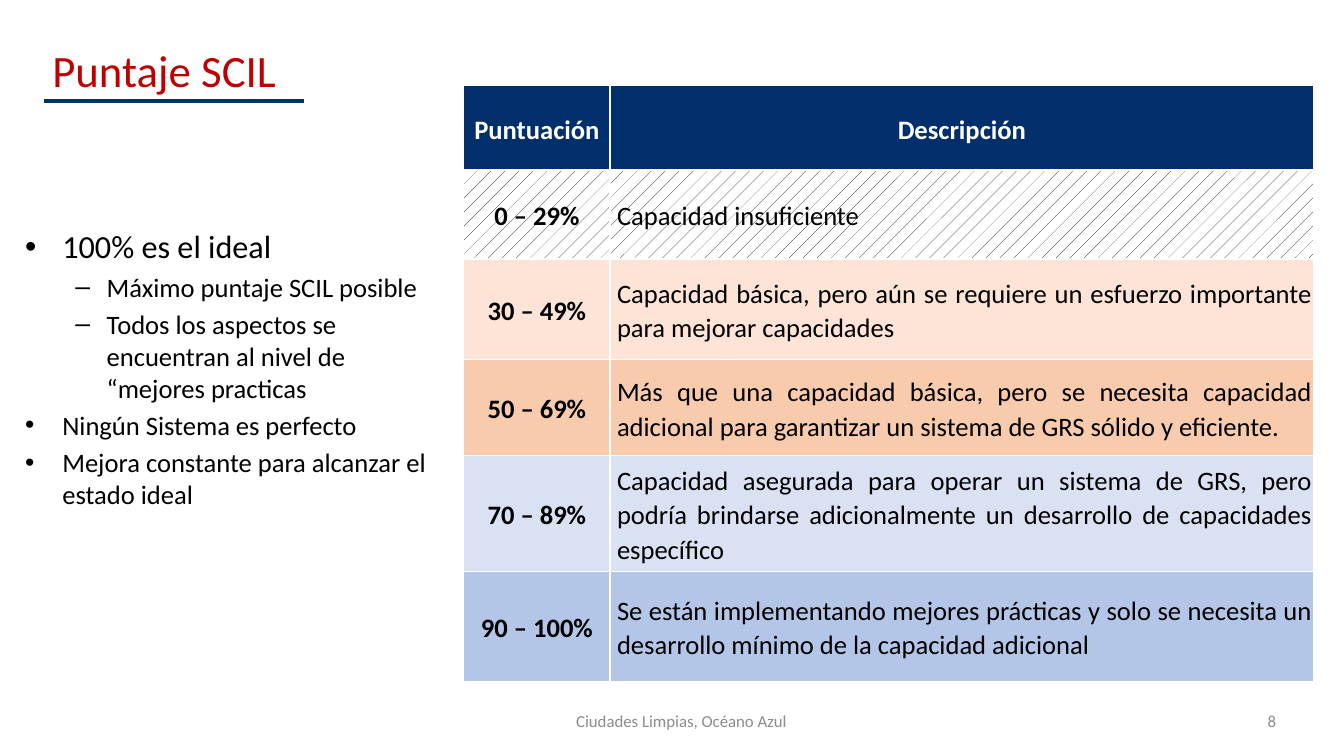
from dataclasses import dataclass

from lxml.etree import SubElement
from pptx import Presentation
from pptx.dml.color import RGBColor
from pptx.enum.dml import MSO_PATTERN
from pptx.enum.shapes import MSO_CONNECTOR
from pptx.enum.text import MSO_ANCHOR, PP_ALIGN
from pptx.oxml.ns import qn
from pptx.util import Inches, Pt


@dataclass(frozen=True)
class Theme:
    """Colours, font and type sizes of the slide."""

    font: str = "Calibri"
    red: str = "C00000"
    rule: str = "003366"
    navy: str = "002F6C"
    black: str = "000000"
    white: str = "FFFFFF"
    grey: str = "8C8C8C"
    title_size: float = 32
    lead_size: float = 23
    body_size: float = 19
    footer_size: float = 12


THEME = Theme()

POINTS = [
    (0, "100% es el ideal", THEME.lead_size),
    (1, "Máximo puntaje SCIL posible", THEME.body_size),
    (1, "Todos los aspectos se encuentran al nivel de “mejores practicas", THEME.body_size),
    (0, "Ningún Sistema es perfecto", THEME.body_size),
    (0, "Mejora constante para alcanzar el estado ideal", THEME.body_size),
]
BULLETS = [("•", 0.37, -0.37), ("–", 0.81, -0.31)]

SCORES = [
    ("Puntuación", "Descripción", THEME.navy, 0.84),
    ("0 – 29%", "Capacidad insuficiente", None, 0.88),
    ("30 – 49%", "Capacidad básica, pero aún se requiere un esfuerzo importante "
     "para mejorar capacidades", "FDE4D6", 1),
    ("50 – 69%", "Más que una capacidad básica, pero se necesita capacidad adicional "
     "para garantizar un sistema de GRS sólido y eficiente.", "F8CBAD", 0.95),
    ("70 – 89%", "Capacidad asegurada para operar un sistema de GRS, pero podría brindarse "
     "adicionalmente un desarrollo de capacidades específico", "D9E1F3", 1.15),
    ("90 – 100%", "Se están implementando mejores prácticas y solo se necesita un desarrollo "
     "mínimo de la capacidad adicional", "B4C6E8", 1.09),
]
SCORE_WIDTH = 1.45


def style(paragraph, size, color, bold=False):
    """Format every run of a paragraph."""
    for run in paragraph.runs:
        run.font.name = THEME.font
        run.font.size = Pt(size)
        run.font.bold = bold
        run.font.color.rgb = RGBColor.from_string(color)


def add_label(slide, box, wording, size, color, align=PP_ALIGN.LEFT):
    """Place one vertically centred line of text in a box."""
    frame = slide.shapes.add_textbox(*map(Inches, box)).text_frame
    frame.word_wrap = True
    frame.vertical_anchor = MSO_ANCHOR.MIDDLE
    frame.text = wording
    frame.paragraphs[0].alignment = align
    style(frame.paragraphs[0], size, color)


def add_title(slide, box):
    """Place the heading and the rule beneath it."""
    left, top, _, height = box
    add_label(slide, box, "Puntaje SCIL", THEME.title_size, THEME.red)
    rule_left, rule_top = left + 0.02, top + height - 0.2
    underline = slide.shapes.add_connector(
        MSO_CONNECTOR.STRAIGHT, Inches(rule_left), Inches(rule_top),
        Inches(rule_left + 2.58), Inches(rule_top))
    underline.line.color.rgb = RGBColor.from_string(THEME.rule)
    underline.line.width = Pt(3)
    SubElement(underline._element.spPr, qn("a:effectLst"))


def add_points(slide, box):
    """Place the two-level bullet list."""
    frame = slide.shapes.add_textbox(*map(Inches, box)).text_frame
    frame.word_wrap = True
    frame.text = "\n".join(wording for _, wording, _ in POINTS)
    for index, (point, (level, _, size)) in enumerate(zip(frame.paragraphs, POINTS)):
        mark, margin, indent = BULLETS[level]
        properties = point._p.get_or_add_pPr()
        properties.set("marL", str(Inches(margin)))
        properties.set("indent", str(Inches(indent)))
        SubElement(properties, qn("a:buFont"), typeface="Arial")
        SubElement(properties, qn("a:buChar"), char=mark)
        point.level = level
        point.space_before = Pt(0.2 * size if index else 0)
        style(point, size, THEME.black)


def add_borders(cell, widths):
    """Draw white borders of the given widths on a cell."""
    properties = cell._tc.get_or_add_tcPr()
    for side, width in widths.items():
        border = SubElement(properties, qn(f"a:ln{side}"), w=str(Pt(width)))
        fill = SubElement(border, qn("a:solidFill"))
        SubElement(fill, qn("a:srgbClr"), val=THEME.white)


def fill_cell(cell, color):
    """Fill a cell with a colour, or with a pattern when there is none."""
    if color:
        cell.fill.solid()
        cell.fill.fore_color.rgb = RGBColor.from_string(color)
    else:
        cell.fill.patterned()
        cell.fill.pattern = MSO_PATTERN.PERCENT_5
        cell.fill.fore_color.rgb = RGBColor.from_string(THEME.black)
        cell.fill.back_color.rgb = RGBColor.from_string(THEME.white)


def add_scores(slide, box):
    """Place the table of score ranges and their meaning."""
    table = slide.shapes.add_table(len(SCORES), 2, *map(Inches, box)).table
    table.first_row = True
    table.horz_banding = False
    table.columns[0].width = Inches(SCORE_WIDTH)
    table.columns[1].width = Inches(box[2] - SCORE_WIDTH)
    for row, (score, meaning, color, height) in enumerate(SCORES):
        table.rows[row].height = Inches(height)
        for column, wording in enumerate((score, meaning)):
            heading = row == 0
            described = column == 1 and not heading
            cell = table.cell(row, column)
            cell.margin_left = cell.margin_right = cell.margin_top = Inches(0.02)
            cell.margin_bottom = 0
            cell.vertical_anchor = MSO_ANCHOR.MIDDLE
            add_borders(cell, {"L": 1, "R": 1, "T": 1.5 if row == 1 else 1,
                               "B": 1.5 if heading else 1})
            fill_cell(cell, color)
            cell.text_frame.text = wording
            paragraph = cell.text_frame.paragraphs[0]
            paragraph.alignment = PP_ALIGN.JUSTIFY if described else PP_ALIGN.CENTER
            paragraph.line_spacing = 1.07
            paragraph.space_after = Pt(8)
            if described:
                paragraph._p.get_or_add_pPr().set("marL", str(Inches(0.05)))
            style(paragraph, THEME.body_size,
                  THEME.white if heading else THEME.black, not described)


def add_footer(slide, box):
    """Place the footer text and, at the right end, the slide number."""
    left, top, width, height = box
    number_width = 0.83
    add_label(slide, (left, top, 7.8, height), "Ciudades Limpias, Océano Azul",
              THEME.footer_size, THEME.grey, PP_ALIGN.CENTER)
    add_label(slide, (left + width - number_width, top, number_width, height), "8",
              THEME.footer_size, THEME.grey, PP_ALIGN.CENTER)


def main():
    """Build and save the slide."""
    deck = Presentation()
    deck.slide_width, deck.slide_height = Inches(13.33), Inches(7.5)
    slide = deck.slides.add_slide(deck.slide_layouts[6])
    add_points(slide, (0.15, 2.2, 4.19, 4.36))
    add_title(slide, (0.42, 0.19, 9.02, 1.01))
    add_scores(slide, (4.6, 0.85, 8.43, 5.91))
    add_footer(slide, (2.86, 6.95, 10.17, 0.4))
    deck.save("out.pptx")


if __name__ == "__main__":
    main()
